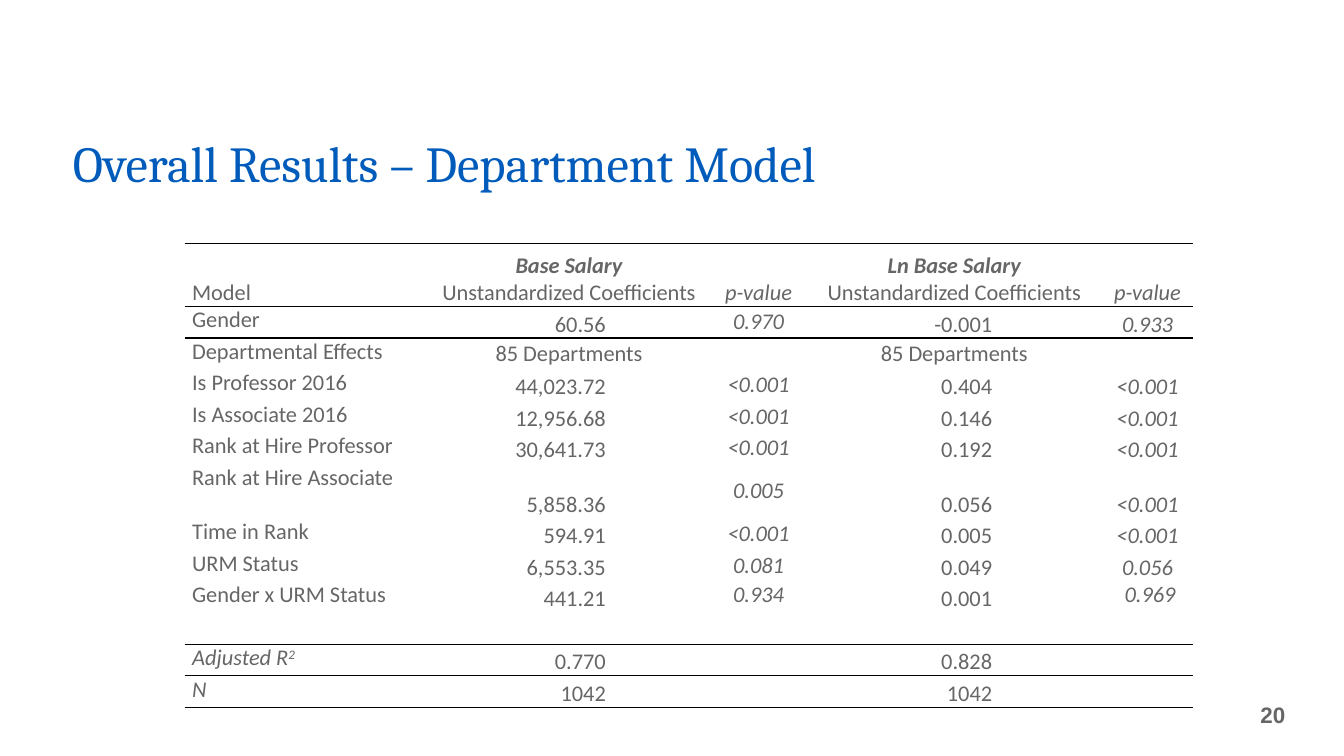
"""Slide with the regression results of the department salary model."""
from lxml import etree
from pptx import Presentation
from pptx import util as u
from pptx.dml.color import RGBColor
from pptx.enum import text
from pptx.oxml.ns import qn

PX = 9525
COLORS = {"title": "005BBB", "body": "666666", "rule": "000000"}
NO_STYLE = "{2D5ABB26-0587-4C30-8999-92F81FD0307C}"
LEFT, CENTER, RIGHT = text.PP_ALIGN.LEFT, text.PP_ALIGN.CENTER, text.PP_ALIGN.RIGHT
TOP, MIDDLE, BOTTOM = text.MSO_ANCHOR.TOP, text.MSO_ANCHOR.MIDDLE, text.MSO_ANCHOR.BOTTOM


def style(font, face, size, color, bold=False, italic=False):
    font.name, font.size = face, u.Pt(size)
    font.bold, font.italic = bold, italic
    font.color.rgb = RGBColor.from_string(COLORS[color])


def add_rule(cell, side):
    line = etree.SubElement(cell._tc.get_or_add_tcPr(), qn(f"a:{side}"), w=str(u.Pt(1)))
    solid = etree.SubElement(line, qn("a:solidFill"))
    etree.SubElement(solid, qn("a:srgbClr"), val=COLORS["rule"])


prs = Presentation()
prs.slide_width, prs.slide_height = 1280 * PX, 720 * PX
slide = prs.slides.add_slide(prs.slide_layouts[6])

title = slide.shapes.add_textbox(60 * PX, 113 * PX, 1179 * PX, 75 * PX).text_frame
title.word_wrap = True
title.vertical_anchor = BOTTOM
title.text = "Overall Results – Department Model"
title.paragraphs[0].line_spacing = 0.8
style(title.paragraphs[0].runs[0].font, "Cambria", 36, "title")

page_number = slide.shapes.add_textbox(1160 * PX, 653 * PX, 76 * PX, 56 * PX).text_frame
page_number.word_wrap = True
page_number.vertical_anchor = MIDDLE
page_number.margin_left = page_number.margin_right = 12 * PX
page_number.text = "20"
page_number.paragraphs[0].alignment = RIGHT
style(page_number.paragraphs[0].runs[0].font, "Arial", 16, "body", bold=True)

COEFFICIENTS = "Unstandardized Coefficients"
results = [
    ("Model", f"Base Salary\n{COEFFICIENTS}", "p-value", f"Ln Base Salary\n{COEFFICIENTS}", "p-value"),
    ("Gender", "60.56", "0.970", "-0.001", "0.933"),
    ("Departmental Effects", "85 Departments", "", "85 Departments", ""),
    ("Is Professor 2016", "44,023.72", "<0.001", "0.404", "<0.001"),
    ("Is Associate 2016", "12,956.68", "<0.001", "0.146", "<0.001"),
    ("Rank at Hire Professor", "30,641.73", "<0.001", "0.192", "<0.001"),
    ("Rank at Hire Associate", "5,858.36", "0.005", "0.056", "<0.001"),
    ("Time in Rank", "594.91", "<0.001", "0.005", "<0.001"),
    ("URM Status", "6,553.35", "0.081", "0.049", "0.056"),
    ("Gender x URM Status", "441.21", "0.934", "0.001", "0.969"),
    ("", "", "", "", ""),
    ("Adjusted R2", "0.770", "", "0.828", ""),
    ("N", "1042", "", "1042", ""),
]
HEADER, DEPARTMENTS, HIRE_ASSOCIATE, INTERACTION, SPACER, ADJUSTED, COUNT = 0, 2, 6, 9, 10, 11, 12
LABEL, SALARY, SALARY_P, LN_SALARY, LN_P = 0, 1, 3, 4, 6
column_widths = [231, 177, 93, 91, 184, 98, 86]
row_heights = {HEADER: 60, HIRE_ASSOCIATE: 52}
rules = {HEADER: ["lnT", "lnB"], 1: ["lnT"], SPACER: ["lnB"], ADJUSTED: ["lnT"], COUNT: ["lnB"]}

frame = slide.shapes.add_table(len(results), len(column_widths), 176 * PX, 232 * PX, 960 * PX, 442 * PX)
table = frame.table
table.first_row = table.horz_banding = False
table._tbl.tblPr.find(qn("a:tableStyleId")).text = NO_STYLE
for column, width in zip(table.columns, column_widths):
    column.width = width * PX

for row, values in enumerate(results):
    table.rows[row].height = row_heights.get(row, 30) * PX
    for cell in table.rows[row].cells:
        cell.margin_left = cell.margin_right = 7 * PX
        cell.margin_top = cell.margin_bottom = 0
        for side in rules.get(row, []):
            add_rule(cell, side)
        cell.fill.background()

    spanning = row in (HEADER, DEPARTMENTS)
    for col, value in zip((LABEL, SALARY, SALARY_P, LN_SALARY, LN_P), values):
        cell = table.cell(row, col)
        is_p_value = col in (SALARY_P, LN_P)
        is_coefficient = col in (SALARY, LN_SALARY)
        if spanning and is_coefficient:
            cell.merge(table.cell(row, col + 1))
        if not value:
            continue
        cell.text = value
        if row == HEADER:
            cell.vertical_anchor = BOTTOM
        elif col == LABEL or (is_p_value and row == INTERACTION):
            cell.vertical_anchor = TOP
        elif col == SALARY_P or row == DEPARTMENTS:
            cell.vertical_anchor = MIDDLE
        else:
            cell.vertical_anchor = BOTTOM
        for line, paragraph in enumerate(cell.text_frame.paragraphs):
            if col == LABEL:
                paragraph.alignment = LEFT
            else:
                paragraph.alignment = CENTER if is_p_value or spanning else RIGHT
            group_name = row == HEADER and is_coefficient and line == 0
            italic = is_p_value or group_name or (col == LABEL and row >= ADJUSTED)
            style(paragraph.runs[0].font, "Calibri", 16, "body", group_name, italic)

table.cell(INTERACTION, LN_P).margin_left = 12 * PX

r_squared = table.cell(ADJUSTED, LABEL).text_frame.paragraphs[0]
r_squared.runs[0].text = "Adjusted R"
exponent = r_squared.add_run()
exponent.text = "2"
style(exponent.font, "Calibri", 16, "body", italic=True)
exponent.font._element.set("baseline", "30000")

prs.save("out.pptx")
